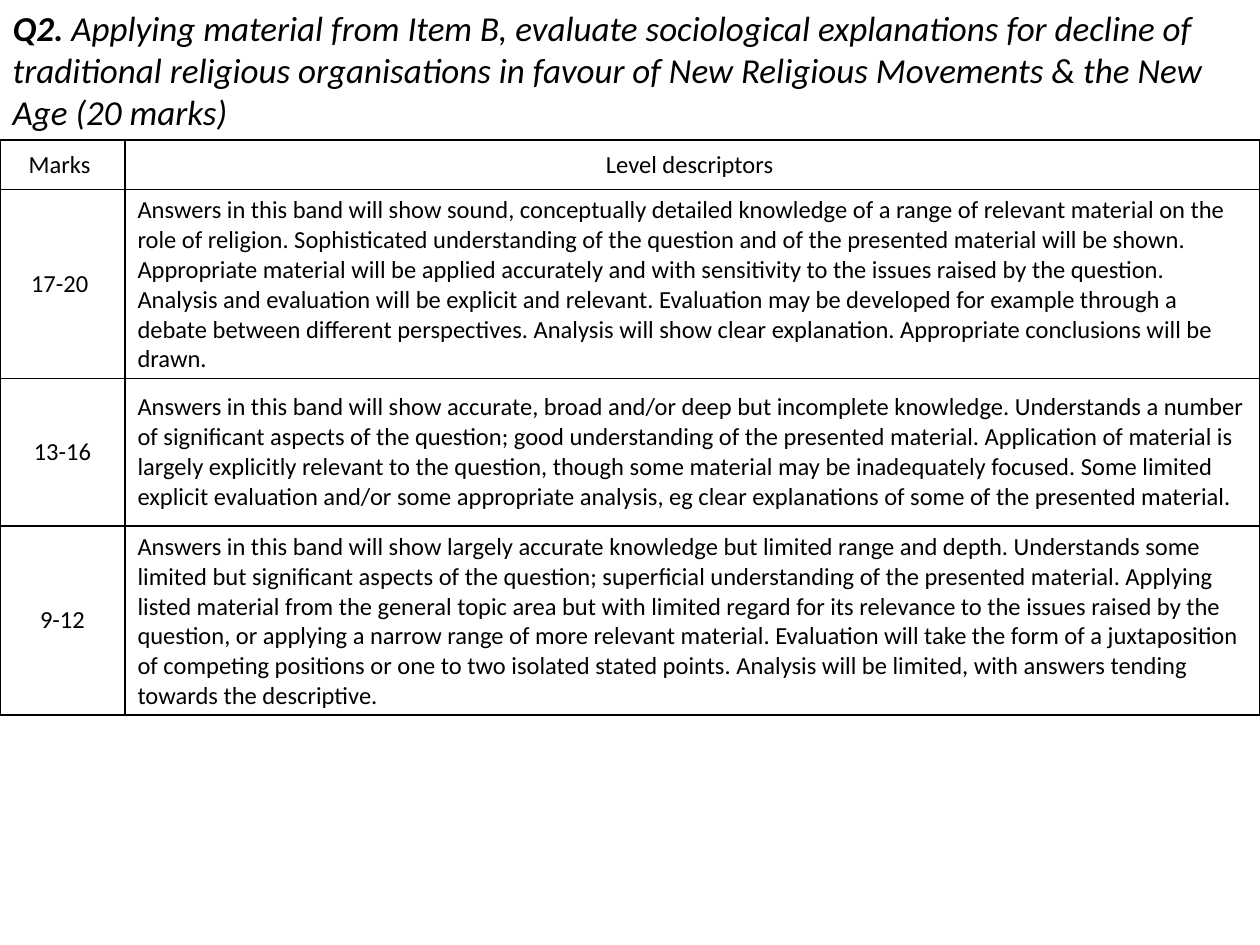
from lxml import etree
from pptx import Presentation
from pptx.dml.color import RGBColor
from pptx.enum import text as t
from pptx.oxml import ns
from pptx.util import Pt

BLACK, WHITE = "000000", "FFFFFF"
SLIDE_WIDTH, SLIDE_HEIGHT = 720, 540
QUESTION_HEIGHT = 80
COLUMN_WIDTHS = [71.4, 648.6]
HEADER_HEIGHT, BAND_HEIGHT = 28.2, 84.2

QUESTION = [
    ("Q2.", True),
    (" Applying material from Item B, evaluate sociological explanations for decline of "
     "traditional religious organisations in favour of New Religious Movements & the New "
     "Age (20 marks)", False),
]
MARK_SCHEME = [
    ("Marks ", "Level descriptors "),
    ("17-20 ",
     "Answers in this band will show sound, conceptually detailed knowledge of a range of "
     "relevant material on the role of religion. Sophisticated understanding of the question "
     "and of the presented material will be shown. Appropriate material will be applied "
     "accurately and with sensitivity to the issues raised by the question. Analysis and "
     "evaluation will be explicit and relevant. Evaluation may be developed for example "
     "through a debate between different perspectives. Analysis will show clear explanation. "
     "Appropriate conclusions will be drawn."),
    ("13-16",
     "Answers in this band will show accurate, broad and/or deep but incomplete knowledge. "
     "Understands a number of significant aspects of the question; good understanding of the "
     "presented material. Application of material is largely explicitly relevant to the "
     "question, though some material may be inadequately focused. Some limited explicit "
     "evaluation and/or some appropriate analysis, eg clear explanations of some of the "
     "presented material."),
    ("9-12",
     "Answers in this band will show largely accurate knowledge but limited range and depth. "
     "Understands some limited but significant aspects of the question; superficial "
     "understanding of the presented material. Applying listed material from the general "
     "topic area but with limited regard for its relevance to the issues raised by the "
     "question, or applying a narrow range of more relevant material. Evaluation will take "
     "the form of a juxtaposition of competing positions or one to two isolated stated "
     "points. Analysis will be limited, with answers tending towards the descriptive."),
]


def color(hex_code):
    return RGBColor.from_string(hex_code)


def add_run(paragraph, wording, size, bold=False, italic=False):
    run = paragraph.add_run()
    run.text = wording
    run.font.name = "Calibri"
    run.font.size = Pt(size)
    run.font.bold = bold
    run.font.italic = italic
    run.font.color.rgb = color(BLACK)


def add_question(slide):
    question = slide.shapes.title
    question.left, question.top = Pt(0), Pt(0)
    question.width, question.height = Pt(SLIDE_WIDTH), Pt(QUESTION_HEIGHT)
    frame = question.text_frame
    frame.word_wrap = True
    frame.auto_size = t.MSO_AUTO_SIZE.SHAPE_TO_FIT_TEXT
    frame.vertical_anchor = t.MSO_ANCHOR.TOP
    paragraph = frame.paragraphs[0]
    paragraph.alignment = t.PP_ALIGN.LEFT
    for wording, bold in QUESTION:
        add_run(paragraph, wording, 20, bold, italic=True)


def add_borders(cell):
    """Rule all four sides; must come before the cell's fill in the XML."""
    properties = cell._tc.get_or_add_tcPr()
    for side in ("lnL", "lnR", "lnT", "lnB"):
        line = etree.SubElement(properties, ns.qn(f"a:{side}"), w=str(Pt(1)))
        fill = etree.SubElement(line, ns.qn("a:solidFill"))
        etree.SubElement(fill, ns.qn("a:srgbClr"), val=BLACK)


def fill_cell(cell, wording, alignment):
    add_borders(cell)
    cell.fill.solid()
    cell.fill.fore_color.rgb = color(WHITE)
    cell.vertical_anchor = t.MSO_ANCHOR.MIDDLE
    paragraph = cell.text_frame.paragraphs[0]
    paragraph.alignment = alignment
    add_run(paragraph, wording, 14)


def add_mark_scheme(slide):
    heights = [HEADER_HEIGHT] + [BAND_HEIGHT] * (len(MARK_SCHEME) - 1)
    scheme = slide.shapes.add_table(
        len(heights), len(COLUMN_WIDTHS), Pt(0), Pt(QUESTION_HEIGHT),
        Pt(SLIDE_WIDTH), Pt(sum(heights))).table
    scheme.first_row = scheme.horz_banding = False
    for column, width in zip(scheme.columns, COLUMN_WIDTHS):
        column.width = Pt(width)
    for row_index, (row, height) in enumerate(zip(scheme.rows, heights)):
        row.height = Pt(height)
        for column_index, wording in enumerate(MARK_SCHEME[row_index]):
            is_descriptor = row_index > 0 and column_index == 1
            alignment = t.PP_ALIGN.LEFT if is_descriptor else t.PP_ALIGN.CENTER
            fill_cell(row.cells[column_index], wording, alignment)


def main():
    presentation = Presentation()
    presentation.slide_width = Pt(SLIDE_WIDTH)
    presentation.slide_height = Pt(SLIDE_HEIGHT)
    slide = presentation.slides.add_slide(presentation.slide_layouts.get_by_name("Title Only"))
    add_mark_scheme(slide)
    add_question(slide)
    presentation.save("out.pptx")


if __name__ == "__main__":
    main()
